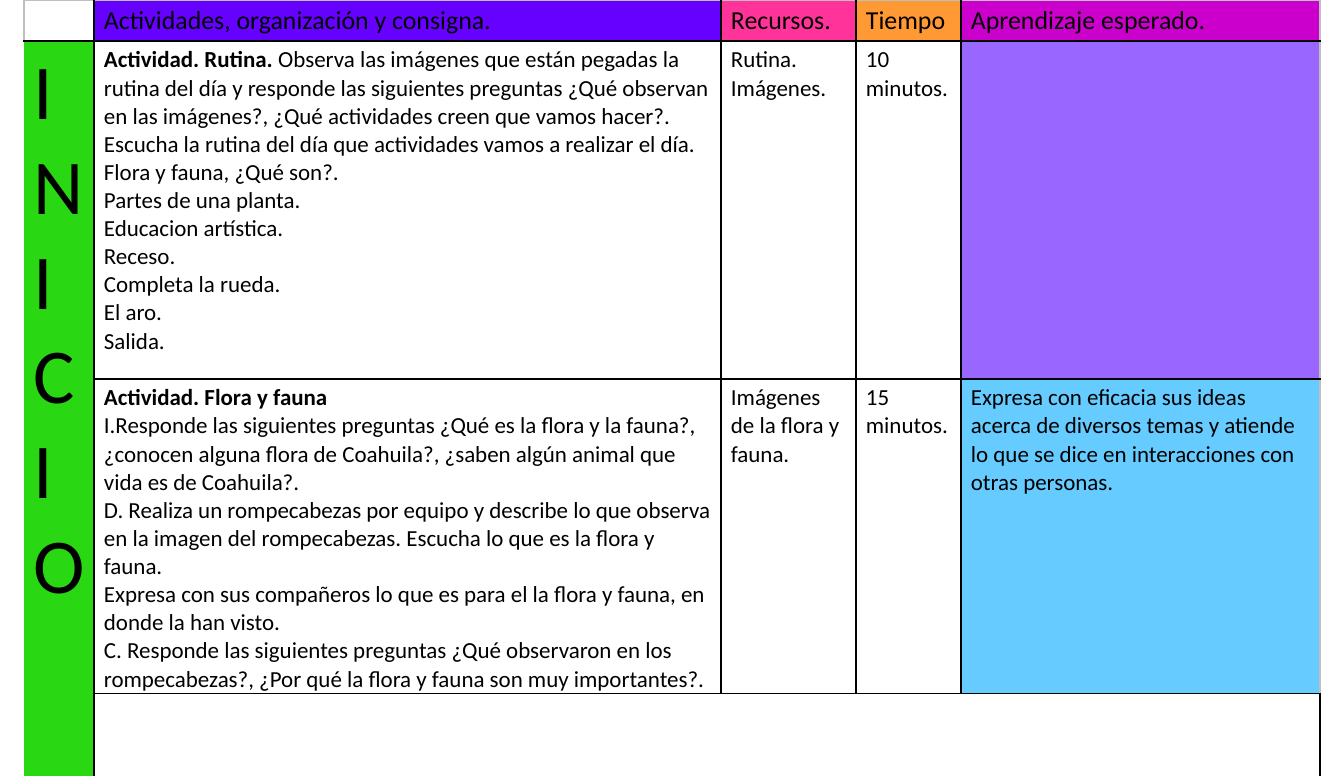
from dataclasses import dataclass

from lxml.etree import SubElement
from pptx import Presentation
from pptx.dml.color import RGBColor
from pptx.oxml.ns import qn
from pptx.table import Table, _Cell as Cell
from pptx.util import Emu, Pt

PX = 914400 / 103.5
SLIDE_WIDTH, SLIDE_HEIGHT = 1344, 776
TABLE_LEFT = 24
COLUMN_WIDTHS = [70, 627, 135, 105, 359]
ROW_HEIGHTS = [41, 338, 313, 84]
BLANK_LAYOUT = 6

COLORS = {
    "black": "000000", "gray": "BFBFBF", "indigo": "6600FF", "pink": "FF3399",
    "orange": "FF9933", "magenta": "CC00CC", "green": "2AD713",
    "violet": "9966FF", "sky": "66CCFF",
}


@dataclass(frozen=True)
class Entry:
    row: int
    column: int
    lines: tuple[str, ...] = ()
    fill: str = ""
    size: int = 16
    lead: str = ""  # bold opening of the first line


HEADINGS = [
    ("Actividades, organización y consigna.", "indigo"),
    ("Recursos.", "pink"),
    ("Tiempo", "orange"),
    ("Aprendizaje esperado.", "magenta"),
]

ENTRIES = [
    *(Entry(0, column, (text,), fill, 18)
      for column, (text, fill) in enumerate(HEADINGS, start=1)),
    Entry(1, 0, tuple("INICIO"), "green", 54),
    # Routine activity
    Entry(1, 1, (
        "Observa las imágenes que están pegadas la rutina del día y responde las "
        "siguientes preguntas ¿Qué observan en las imágenes?, ¿Qué actividades "
        "creen que vamos hacer?.",
        "Escucha la rutina del día que actividades vamos a realizar el día.",
        "Flora y fauna, ¿Qué son?.",
        "Partes de una planta.",
        "Educacion artística.",
        "Receso.",
        "Completa la rueda.",
        "El aro.",
        "Salida.",
    ), lead="Actividad. Rutina. "),
    Entry(1, 2, ("Rutina.", "Imágenes.")),
    Entry(1, 3, ("10 minutos.",)),
    Entry(1, 4, fill="violet"),
    # Flora and fauna activity
    Entry(2, 1, (
        "",
        "I.Responde las siguientes preguntas ¿Qué es la flora y la fauna?, "
        "¿conocen alguna flora de Coahuila?, ¿saben algún animal que vida es de "
        "Coahuila?.",
        "D. Realiza un rompecabezas por equipo y describe lo que observa en la "
        "imagen del rompecabezas. Escucha lo que es la flora y fauna.",
        "Expresa con sus compañeros lo que es para el la flora y fauna, en donde "
        "la han visto.",
        "C. Responde las siguientes preguntas ¿Qué observaron en los "
        "rompecabezas?, ¿Por qué la flora y fauna son muy importantes?.",
    ), lead="Actividad. Flora y fauna"),
    Entry(2, 2, ("Imágenes de la flora y fauna.",)),
    Entry(2, 3, ("15 minutos.",)),
    Entry(2, 4, (
        "Expresa con eficacia sus ideas acerca de diversos temas y atiende lo que "
        "se dice en interacciones con otras personas.",
    ), "sky"),
]


def px(length: int) -> Emu:
    return Emu(round(length * PX))


def rgb(name: str) -> RGBColor:
    return RGBColor.from_string(COLORS[name])


def set_border(cell: Cell, side: str, color: str) -> None:
    """Draw one side (L, R, T or B); an empty color leaves it without a line."""
    properties = cell._tc.get_or_add_tcPr()
    line = SubElement(properties, qn(f"a:ln{side}"), w=str(Pt(1)))
    if color:
        fill = SubElement(line, qn("a:solidFill"))
        SubElement(fill, qn("a:srgbClr"), val=COLORS[color])
    else:
        SubElement(line, qn("a:noFill"))


def border_colors(row: int, column: int) -> dict[str, str]:
    last_row, last_column = len(ROW_HEIGHTS) - 1, len(COLUMN_WIDTHS) - 1
    left = "black" if column else ("" if row else "gray")
    right = "gray" if column == last_column else "black"
    top = "black" if row else "gray"
    bottom = "" if row == last_row else "black"
    return {"L": left, "R": right, "T": top, "B": bottom}


def write_entry(table: Table, entry: Entry) -> None:
    cell = table.cell(entry.row, entry.column)
    if entry.fill:
        cell.fill.solid()
        cell.fill.fore_color.rgb = rgb(entry.fill)
    frame = cell.text_frame
    for index, text in enumerate(entry.lines):
        paragraph = frame.add_paragraph() if index else frame.paragraphs[0]
        paragraph.font.name = "Calibri"
        paragraph.font.size = Pt(entry.size)
        paragraph.font.color.rgb = rgb("black")
        if entry.lead and index == 0:
            lead = paragraph.add_run()
            lead.text = entry.lead
            lead.font.bold = True
        if text:
            paragraph.add_run().text = text


def main() -> None:
    presentation = Presentation()
    presentation.slide_width = px(SLIDE_WIDTH)
    presentation.slide_height = px(SLIDE_HEIGHT)
    slide = presentation.slides.add_slide(presentation.slide_layouts[BLANK_LAYOUT])

    # Table grid
    table = slide.shapes.add_table(
        len(ROW_HEIGHTS), len(COLUMN_WIDTHS), px(TABLE_LEFT), px(0),
        px(sum(COLUMN_WIDTHS)), px(sum(ROW_HEIGHTS))).table
    table.first_row = table.horz_banding = False
    for column, width in zip(table.columns, COLUMN_WIDTHS):
        column.width = px(width)
    for row, height in zip(table.rows, ROW_HEIGHTS):
        row.height = px(height)

    # Borders and margins
    for row in range(len(ROW_HEIGHTS)):
        for column in range(len(COLUMN_WIDTHS)):
            cell = table.cell(row, column)
            for side, color in border_colors(row, column).items():
                set_border(cell, side, color)
            cell.fill.background()
            cell.margin_left = cell.margin_right = px(10)
            cell.margin_top = px(5)
            cell.margin_bottom = px(0)

    # Merged areas
    table.cell(1, 0).merge(table.cell(3, 0))
    table.cell(3, 1).merge(table.cell(3, 4))

    # Contents
    for entry in ENTRIES:
        write_entry(table, entry)

    presentation.save("out.pptx")


if __name__ == "__main__":
    main()
